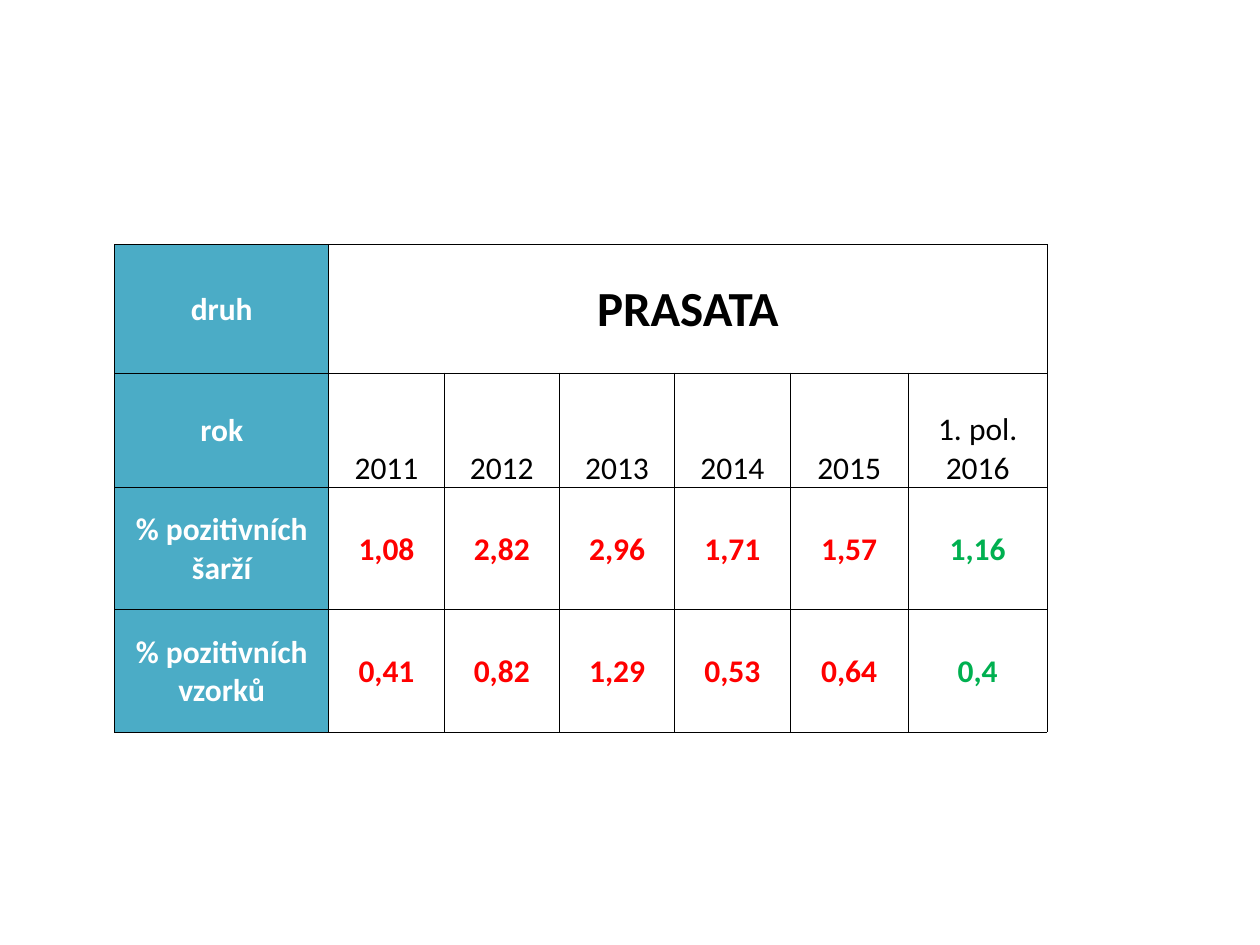
from dataclasses import dataclass

from lxml import etree
from pptx import Presentation, util as u
from pptx.dml.color import RGBColor
from pptx.enum import text
from pptx.oxml import ns

WHITE = RGBColor(0xFF, 0xFF, 0xFF)
BLACK = RGBColor(0x00, 0x00, 0x00)
TEAL = RGBColor(0x4B, 0xAC, 0xC6)
RED = RGBColor(0xFF, 0x00, 0x00)
GREEN = RGBColor(0x00, 0xB0, 0x50)

TABLE_WIDTH = 7.4
LABEL_WIDTH, WIDE_YEAR_WIDTH, HALF_YEAR_WIDTH = 1.7, 0.94, 1.1
YEAR_WIDTH = (TABLE_WIDTH - LABEL_WIDTH - WIDE_YEAR_WIDTH - HALF_YEAR_WIDTH) / 4
COLUMN_WIDTHS = [LABEL_WIDTH, *[YEAR_WIDTH] * 4, WIDE_YEAR_WIDTH, HALF_YEAR_WIDTH]
ROW_HEIGHTS = [1.02, 0.91, 0.97, 0.97]


@dataclass(frozen=True)
class CellStyle:
    color: RGBColor
    size: int = 18
    bold: bool = True
    anchor: text.MSO_ANCHOR = text.MSO_ANCHOR.MIDDLE
    fill: RGBColor | None = None


@dataclass(frozen=True)
class TableRow:
    label: str
    values: list[str]
    style: CellStyle
    last_style: CellStyle


LABEL = CellStyle(WHITE, fill=TEAL)
SPECIES = CellStyle(BLACK, size=28)
YEAR = CellStyle(BLACK, bold=False, anchor=text.MSO_ANCHOR.BOTTOM)
SHARE = CellStyle(RED)
LATEST_SHARE = CellStyle(GREEN)

ROWS = [
    TableRow("druh", ["PRASATA", "", "", "", "", ""], SPECIES, SPECIES),
    TableRow("rok", ["2011", "2012", "2013", "2014", "2015", "1. pol. 2016"],
             YEAR, YEAR),
    TableRow("% pozitivních šarží",
             ["1,08", "2,82", "2,96", "1,71", "1,57", "1,16"],
             SHARE, LATEST_SHARE),
    TableRow("% pozitivních vzorků",
             ["0,41", "0,82", "1,29", "0,53", "0,64", "0,4"],
             SHARE, LATEST_SHARE),
]


def add_borders(cell) -> None:
    properties = cell._tc.get_or_add_tcPr()
    for side in ("lnL", "lnR", "lnT", "lnB"):
        line = etree.SubElement(properties, ns.qn(f"a:{side}"), w=str(u.Pt(0.5)))
        fill = etree.SubElement(line, ns.qn("a:solidFill"))
        etree.SubElement(fill, ns.qn("a:srgbClr"), val=str(BLACK))


def fill_cell(cell, wording: str, style: CellStyle) -> None:
    add_borders(cell)
    if style.fill is None:
        cell.fill.background()
    else:
        cell.fill.solid()
        cell.fill.fore_color.rgb = style.fill
    cell.margin_left = cell.margin_right = cell.margin_top = u.Inches(0.01)
    cell.margin_bottom = u.Inches(0)
    cell.vertical_anchor = style.anchor
    paragraph = cell.text_frame.paragraphs[0]
    paragraph.text = wording
    paragraph.alignment = text.PP_ALIGN.CENTER
    font = paragraph.font
    font.name = "Calibri"
    font.size = u.Pt(style.size)
    font.bold = style.bold
    font.color.rgb = style.color


def add_results_table(slide) -> None:
    table = slide.shapes.add_table(
        len(ROWS), len(COLUMN_WIDTHS), u.Inches(0.91), u.Inches(1.94),
        u.Inches(TABLE_WIDTH), u.Inches(sum(ROW_HEIGHTS))).table
    table.first_row = table.horz_banding = False
    for column, width in zip(table.columns, COLUMN_WIDTHS):
        column.width = u.Inches(width)
    for table_row, height in zip(table.rows, ROW_HEIGHTS):
        table_row.height = u.Inches(height)
    for cells, row in zip(table.rows, ROWS):
        styles = [LABEL, *[row.style] * (len(row.values) - 1), row.last_style]
        for cell, wording, style in zip(cells.cells, [row.label, *row.values], styles):
            fill_cell(cell, wording, style)
    table.cell(0, 1).merge(table.cell(0, len(COLUMN_WIDTHS) - 1))


def main() -> None:
    presentation = Presentation()
    presentation.slide_width = u.Inches(10)
    presentation.slide_height = u.Inches(7.5)
    slide = presentation.slides.add_slide(presentation.slide_layouts[6])
    add_results_table(slide)
    presentation.save("out.pptx")


if __name__ == "__main__":
    main()
